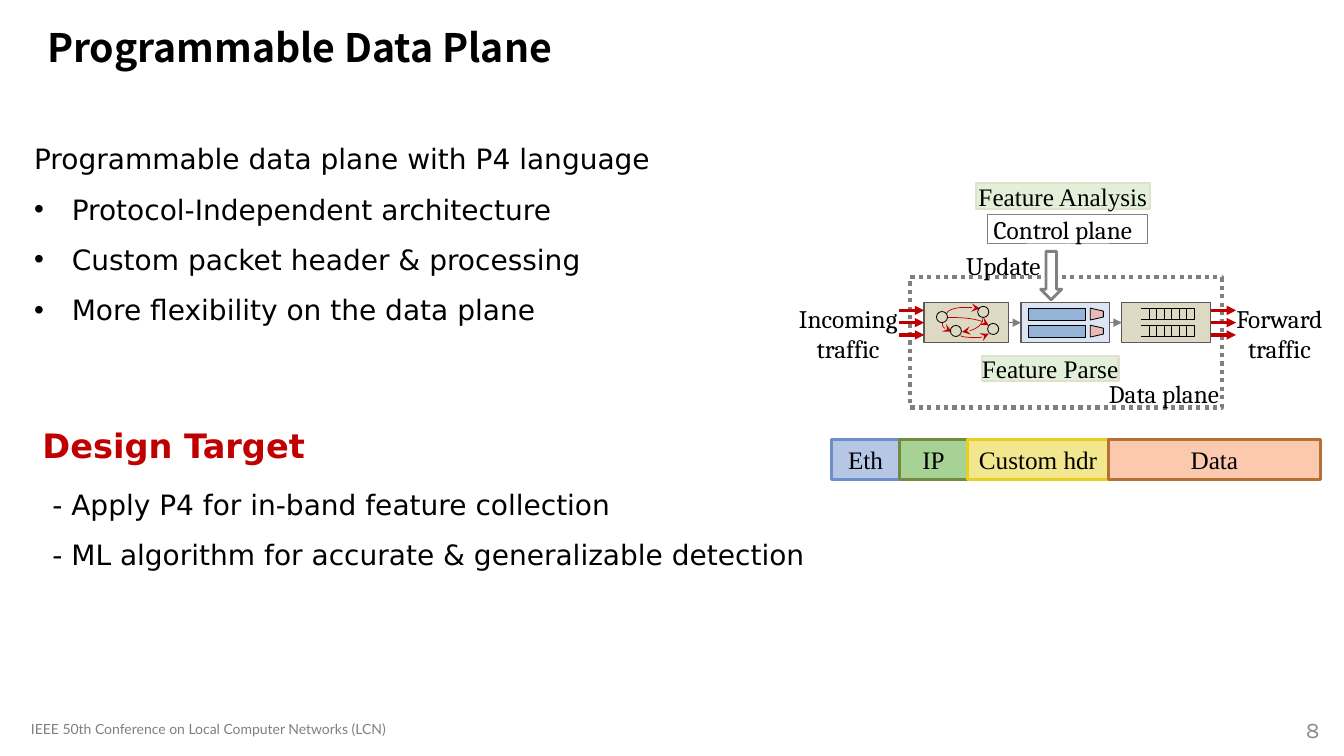
from pptx import Presentation
from pptx.dml.color import RGBColor
from pptx.enum.dml import MSO_LINE
from pptx.enum.shapes import MSO_CONNECTOR, MSO_SHAPE
from pptx.enum.text import MSO_ANCHOR, PP_ALIGN
from pptx.oxml.ns import qn
from pptx.util import Cm, Pt
from lxml import etree

RECT, OVAL = MSO_SHAPE.RECTANGLE, MSO_SHAPE.OVAL
TRAPEZOID, ARROW = MSO_SHAPE.TRAPEZOID, MSO_SHAPE.RIGHT_ARROW
STRAIGHT, CURVE = MSO_CONNECTOR.STRAIGHT, MSO_CONNECTOR.CURVE
LEFT, CENTER = PP_ALIGN.LEFT, PP_ALIGN.CENTER
TOP, MIDDLE, BOTTOM = MSO_ANCHOR.TOP, MSO_ANCHOR.MIDDLE, MSO_ANCHOR.BOTTOM
BODY, SERIF, LABEL = "DejaVu Sans", "Times New Roman", "Cambria"
BLACK, GREY, RED, TAN = "000000", "808080", "C00000", "DDD9C3"
INSETS, NO_INSETS = (0.25, 0.13, 0.25, 0.13), (0, 0, 0, 0)

# All places and lengths below are in centimetres: left, top, width, height
TITLE = "Programmable Data Plane"
FOOTER = "IEEE 50th Conference on Local Computer Networks (LCN)"
PAGE = "8"
P4_POINTS = [
    "Programmable data plane with P4 language",
    "• Protocol-Independent architecture",
    "• Custom packet header & processing",
    "• More flexibility on the data plane",
]
TARGET_HEADING = "Design Target"
TARGETS = [
    "- Apply P4 for in-band feature collection",
    "- ML algorithm for accurate & generalizable detection",
]
PACKET_LEFT, PACKET_TOP, PACKET_HEIGHT = 20.96, 11.07, 1.02
PACKET_FIELDS = [  # name, width, fill, outline
    ("Eth", 1.71, "6F8FCC", "6F8FCC"),
    ("IP", 1.71, "4EA72E", "738A42"),
    ("Custom hdr", 3.56, "E7CF1F", "E7CF1F"),
    ("Data", 5.33, "F8975E", "B76F34"),
]
PIPE_TOP, PIPE_HEIGHT = 7.62, 1.02
STAGES = [  # left, width, fill
    (23.29, 2.13, TAN),
    (25.73, 2.24, "DCE6F2"),
    (28.27, 2.24, TAN),
]
ROW_TOPS = (7.77, 8.2)
SLOT_LEFT, SLOT_STEP, SLOTS = 28.96, 0.19, 6
NODE_SIZE = 0.28
STATES = [(24.89, 8.15), (24.64, 7.72), (23.95, 8.2), (23.6, 7.85)]
TRANSITIONS = [  # frame, rotation, flipped across, flipped down, preset, bend
    ((24.21, 7.42, 0.13, 0.84), 90, True, True, "curvedConnector3", 120200),
    ((23.75, 8.13, 0.23, 0.23), 270, True, False, "curvedConnector2", None),
    ((24.33, 7.92, 0.36, 0.53), 90, False, False, "curvedConnector2", None),
    ((23.88, 8.0, 1.04, 0.2), 0, False, False, "curvedConnector2", None),
    ((24.54, 8.08, 0.05, 0.71), 90, True, True, "curvedConnector3", -98100),
]
TRAFFIC_STEP, TRAFFIC_LENGTH = 0.31, 0.64
PIPE_LABELS = [
    (["Incoming traffic"], (19.76, 7.52, 3.23, 1.63)),
    (["Update"], (23.67, 6.17, 3.23, 0.94)),
    (["Data plane"], (27.61, 9.4, 3.45, 1.02)),
    (["Forward", "traffic"], (30.63, 7.52, 3.23, 1.63)),
]
FEATURES = [
    ("Feature Parse", (24.74, 8.97, 3.45, 0.64)),
    ("Feature Analysis", (24.59, 4.62, 4.39, 0.64)),
]

prs = Presentation()
prs.slide_width, prs.slide_height = Cm(33.87), Cm(19.05)
slide = prs.slides.add_slide(prs.slide_layouts[6])


def rgb(value):
    return RGBColor.from_string(value)


def write(shape, lines, size, font, color=BLACK, bold=False, align=LEFT,
          anchor=TOP, insets=INSETS, spacing=None, wrap=True):
    """Fill a shape with paragraphs; a leading "• " becomes a real bullet."""
    frame = shape.text_frame
    frame.word_wrap, frame.vertical_anchor = wrap, anchor
    (frame.margin_left, frame.margin_top,
     frame.margin_right, frame.margin_bottom) = map(Cm, insets)
    for i, line in enumerate(lines):
        paragraph = frame.add_paragraph() if i else frame.paragraphs[0]
        paragraph.alignment = align
        if spacing:
            paragraph.line_spacing = spacing
        if line.startswith("• "):
            props = paragraph._p.get_or_add_pPr()
            props.set("marL", str(Cm(0.95)))
            props.set("indent", str(Cm(-0.95)))
            etree.SubElement(props, qn("a:buFont")).set("typeface", "Arial")
            etree.SubElement(props, qn("a:buChar")).set("char", "•")
        run = paragraph.add_run()
        run.text = line.removeprefix("• ")
        run.font.size, run.font.name, run.font.bold = Pt(size), font, bold
        run.font.color.rgb = rgb(color)
        etree.SubElement(run._r.get_or_add_rPr(), qn("a:ea")).set("typeface", font)


def text(box, lines, size, font, **style):
    write(slide.shapes.add_textbox(*map(Cm, box)), lines, size, font, **style)


def draw(kind, box, fill=None, line=None, width=1, alpha=None, turn=0):
    shape = slide.shapes.add_shape(kind, *map(Cm, box))
    shape.shadow.inherit = False
    shape.rotation = turn
    if fill:
        shape.fill.solid()
        shape.fill.fore_color.rgb = rgb(fill)
        if alpha:
            color = shape.fill._xPr.find(qn("a:solidFill"))[0]
            etree.SubElement(color, qn("a:alpha")).set("val", str(alpha * 1000))
    else:
        shape.fill.background()
    if line:
        shape.line.color.rgb = rgb(line)
        shape.line.width = Pt(width)
    else:
        shape.line.fill.background()
    return shape


def connect(start, end, color, width, head=None, kind=STRAIGHT):
    link = slide.shapes.add_connector(kind, *map(Cm, start + end))
    link.line.color.rgb = rgb(color)
    link.line.width = Pt(width)
    if head:
        etree.SubElement(link.line._get_or_add_ln(), qn("a:tailEnd")).set("type", head)
    etree.SubElement(link._element.spPr, qn("a:effectLst"))
    return link


def transition(box, turn, flip_x, flip_y, preset, bend):
    """Draw a curved state arrow inside its unrotated frame."""
    left, top, width, height = box
    xs, ys = (left, left + width), (top, top + height)
    start, end = (xs[flip_x], ys[flip_y]), (xs[not flip_x], ys[not flip_y])
    link = connect(start, end, RED, 0.5, "stealth", CURVE)
    props = link._element.spPr
    props.find(qn("a:xfrm")).set("rot", str(turn * 60000))
    geometry = props.find(qn("a:prstGeom"))
    geometry.set("prst", preset)
    if bend is not None:
        guide = etree.SubElement(geometry.find(qn("a:avLst")), qn("a:gd"))
        guide.set("name", "adj1")
        guide.set("fmla", f"val {bend}")


# Page text
text((32.66, 17.91, 1.17, 0.94), [PAGE], 16, "Karla", color="8C8C8C", wrap=False)
text((0.94, 0.33, 28.65, 1.83), [TITLE], 28, "Noto Sans CJK SC", bold=True,
     anchor=MIDDLE, spacing=0.9)
text((0.53, 18.03, 11.61, 0.69), [FOOTER], 10, "Lato", color=GREY)
text((1.07, 11.73, 19.63, 2.64), TARGETS, 20, BODY, spacing=1.5)
text((0.61, 3.02, 23.01, 5.21), P4_POINTS, 20, BODY, spacing=1.5)
text((1.07, 10.69, 25.86, 1.04), [TARGET_HEADING], 24, BODY, color=RED, bold=True,
     anchor=BOTTOM, insets=NO_INSETS)

# Packet layout
field_left = PACKET_LEFT
for name, width, fill, outline in PACKET_FIELDS:
    field = draw(RECT, (field_left, PACKET_TOP, width, PACKET_HEIGHT), fill, outline, 2, 50)
    write(field, [name], 18, SERIF, align=CENTER, anchor=MIDDLE, wrap=False)
    field_left += width

# Pipeline stages
middle = PIPE_TOP + PIPE_HEIGHT / 2
stages = [draw(RECT, (left, PIPE_TOP, width, PIPE_HEIGHT), fill, "595959")
          for left, width, fill in STAGES]
for i, (left, width, _) in enumerate(STAGES[:-1]):
    link = connect((left + width, middle), (STAGES[i + 1][0], middle), GREY, 1, "triangle")
    link.begin_connect(stages[i], 3)
    link.end_connect(stages[i + 1], 1)
for curve in TRANSITIONS:
    transition(*curve)
for x, y in STATES:
    draw(OVAL, (x, y, NODE_SIZE, NODE_SIZE), None, BLACK, 0.6)
for top in ROW_TOPS:
    draw(RECT, (25.91, top, 1.45, 0.3), "95B3D7", BLACK, 0.6)
    draw(TRAPEZOID, (27.49, top - 0.02, 0.3, 0.33), "E7B9B8", BLACK, 0.6, turn=90)
    draw(RECT, (28.6, top, 1.5, 0.28), None, BLACK, 0.75)
    for slot in range(SLOTS):
        x = SLOT_LEFT + slot * SLOT_STEP
        connect((x, top), (x, top + 0.28), BLACK, 0.75)
draw(RECT, (28.52, 7.75, 0.23, 0.81), TAN)

# Planes and traffic
draw(RECT, (22.94, 6.99, 7.85, 3.28), None, GREY, 3).line.dash_style = MSO_LINE.ROUND_DOT
control = draw(RECT, (24.89, 5.41, 4.04, 0.74), None, GREY, 0.75)
write(control, ["Control plane"], 18, LABEL, align=CENTER, anchor=MIDDLE,
      insets=(0, 0, 0.25, 0), wrap=False)
draw(ARROW, (25.88, 6.68, 1.22, 0.53), "FFFFFF", GREY, 2, turn=90)
for lines, box in PIPE_LABELS:
    text(box, lines, 18, LABEL, align=CENTER)
entry, leave = STAGES[0][0], STAGES[-1][0] + STAGES[-1][1]
for step in (-1, 0, 1):
    y = middle + step * TRAFFIC_STEP
    incoming = connect((entry - TRAFFIC_LENGTH, y), (entry, y), RED, 2.25, "triangle")
    forward = connect((leave, y), (leave + TRAFFIC_LENGTH, y), RED, 2.25, "triangle")
    if step == 0:
        incoming.end_connect(stages[0], 1)
        forward.begin_connect(stages[-1], 3)
for name, box in FEATURES:
    write(draw(RECT, box, "E2F0D9", "E2DFCC", 1.5), [name], 18, SERIF, align=CENTER,
          anchor=MIDDLE, insets=NO_INSETS, wrap=False)

prs.save("out.pptx")
